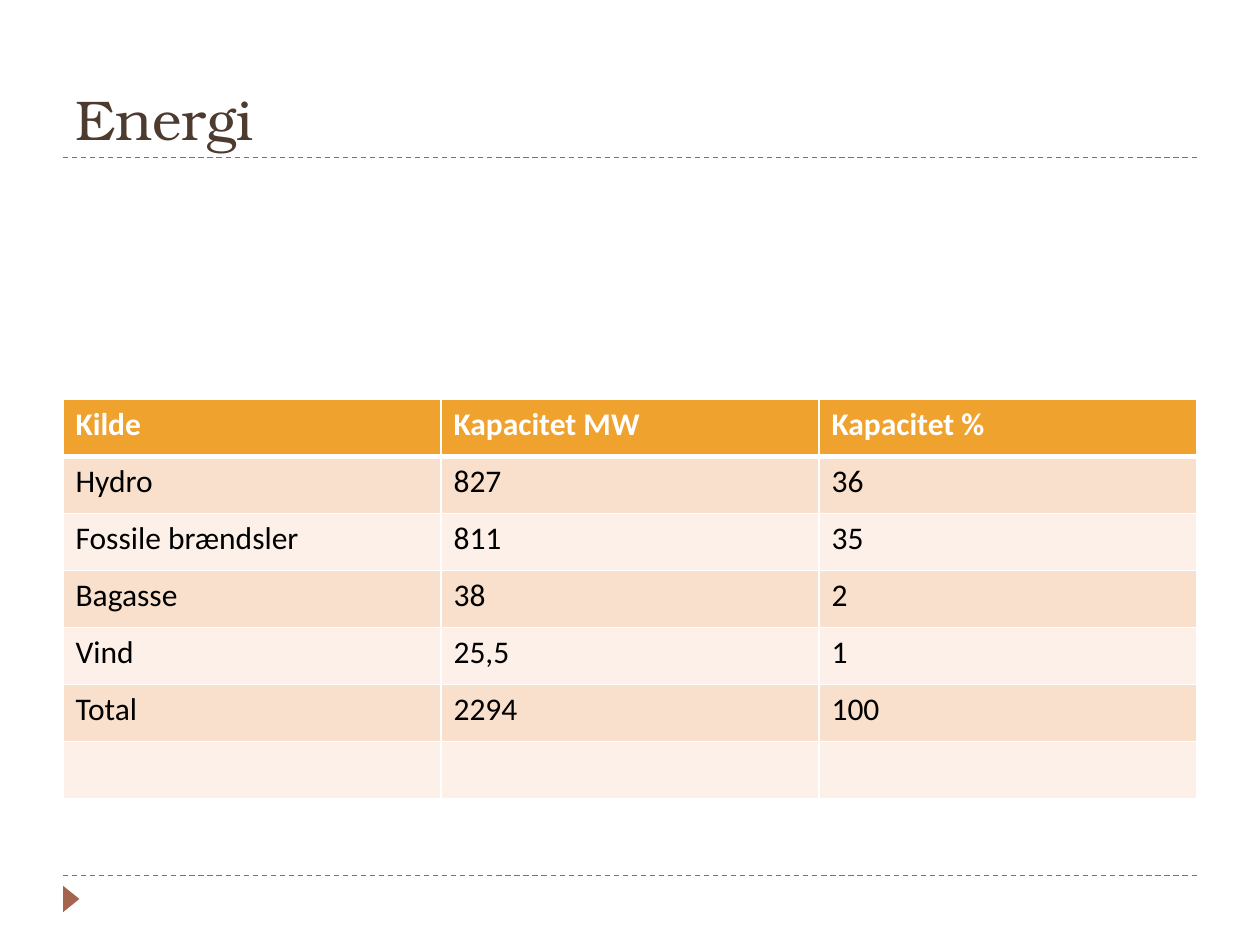
from dataclasses import dataclass

from lxml import etree
from pptx import Presentation
from pptx import util as u
from pptx.dml.color import RGBColor
from pptx.enum import dml, shapes, text
from pptx.oxml import ns


@dataclass(frozen=True)
class Theme:
    title_font: str = "TeX Gyre Bonum"
    body_font: str = "Calibri"
    title_size: float = 32
    body_size: float = 18
    title: str = "4E3B30"
    accent: str = "A5644E"
    header: str = "F0A22E"
    bands: tuple[str, str] = ("F9E0CD", "FCF0E8")
    white: str = "FFFFFF"
    black: str = "000000"
    thin: float = 1
    thick: float = 3


@dataclass(frozen=True)
class Box:
    """A frame given in inches."""
    left: float
    top: float
    width: float
    height: float

    def emu(self) -> tuple[int, ...]:
        return tuple(u.Inches(v) for v in (self.left, self.top, self.width, self.height))


THEME = Theme()
SLIDE_W, SLIDE_H = 10, 7.5
MARGIN = SLIDE_W * 0.05
CONTENT_W = SLIDE_W - 2 * MARGIN
TITLE_RULE_Y, FOOTER_RULE_Y = 1.25, 6.95
ROW_H = 0.453

ENERGY_ROWS = (
    ("Kilde", "Kapacitet MW", "Kapacitet %"),
    ("Hydro", "827", "36"),
    ("Fossile brændsler", "811", "35"),
    ("Bagasse", "38", "2"),
    ("Vind", "25,5", "1"),
    ("Total", "2294", "100"),
    ("", "", ""),
)


def rgb(value: str) -> RGBColor:
    return RGBColor.from_string(value)


def style_font(font, name: str, size: float, color: str, bold: bool = False) -> None:
    font.name, font.size, font.bold = name, u.Pt(size), bold
    font.color.rgb = rgb(color)


def draw_rule(slide, y: float) -> None:
    rule = slide.shapes.add_connector(
        shapes.MSO_CONNECTOR.STRAIGHT,
        u.Inches(MARGIN), u.Inches(y), u.Inches(MARGIN + CONTENT_W), u.Inches(y))
    rule.line.color.rgb = rgb(THEME.accent)
    rule.line.width = u.Pt(0.75)
    rule.line.dash_style = dml.MSO_LINE.DASH
    etree.SubElement(rule._element.spPr, ns.qn("a:effectLst"))


def draw_marker(slide, box: Box) -> None:
    marker = slide.shapes.add_shape(shapes.MSO_SHAPE.ISOSCELES_TRIANGLE, *box.emu())
    marker.rotation = 90
    marker.shadow.inherit = False
    marker.fill.solid()
    marker.fill.fore_color.rgb = rgb(THEME.accent)
    marker.line.fill.background()


def draw_title(slide, wording: str, box: Box) -> None:
    frame = slide.shapes.add_textbox(*box.emu()).text_frame
    frame.word_wrap = True
    frame.vertical_anchor = text.MSO_ANCHOR.BOTTOM
    frame.text = wording
    style_font(frame.paragraphs[0].runs[0].font, THEME.title_font, THEME.title_size, THEME.title)


def set_borders(cell, top: float, bottom: float) -> None:
    properties = cell._tc.get_or_add_tcPr()
    widths = {"lnL": THEME.thin, "lnR": THEME.thin, "lnT": top, "lnB": bottom}
    for side, width in widths.items():
        border = etree.SubElement(properties, ns.qn(f"a:{side}"), w=str(u.Pt(width)))
        fill = etree.SubElement(border, ns.qn("a:solidFill"))
        etree.SubElement(fill, ns.qn("a:srgbClr"), val=THEME.white)


def draw_table(slide, rows: tuple[tuple[str, ...], ...], box: Box) -> None:
    table = slide.shapes.add_table(len(rows), len(rows[0]), *box.emu()).table
    for r, row in enumerate(rows):
        is_header = r == 0
        fill = THEME.header if is_header else THEME.bands[(r - 1) % 2]
        color = THEME.white if is_header else THEME.black
        for c, wording in enumerate(row):
            cell = table.cell(r, c)
            set_borders(cell,
                        top=THEME.thick if r == 1 else THEME.thin,
                        bottom=THEME.thick if is_header else THEME.thin)
            cell.fill.solid()
            cell.fill.fore_color.rgb = rgb(fill)
            cell.text_frame.text = wording
            for run in cell.text_frame.paragraphs[0].runs:
                style_font(run.font, THEME.body_font, THEME.body_size, color, is_header)


def main() -> None:
    deck = Presentation()
    deck.slide_width, deck.slide_height = u.Inches(SLIDE_W), u.Inches(SLIDE_H)
    slide = deck.slides.add_slide(deck.slide_layouts[6])

    # Frame: footer and title rules, footer marker
    for y in (FOOTER_RULE_Y, TITLE_RULE_Y):
        draw_rule(slide, y)
    draw_marker(slide, Box(0.46, 7.07, 0.21, 0.13))

    # Content: title and energy sources
    draw_title(slide, "Energi", Box(MARGIN, 0.17, CONTENT_W, TITLE_RULE_Y - 0.17))
    draw_table(slide, ENERGY_ROWS, Box(MARGIN, 3.17, CONTENT_W, ROW_H * len(ENERGY_ROWS)))

    deck.save("out.pptx")


if __name__ == "__main__":
    main()
